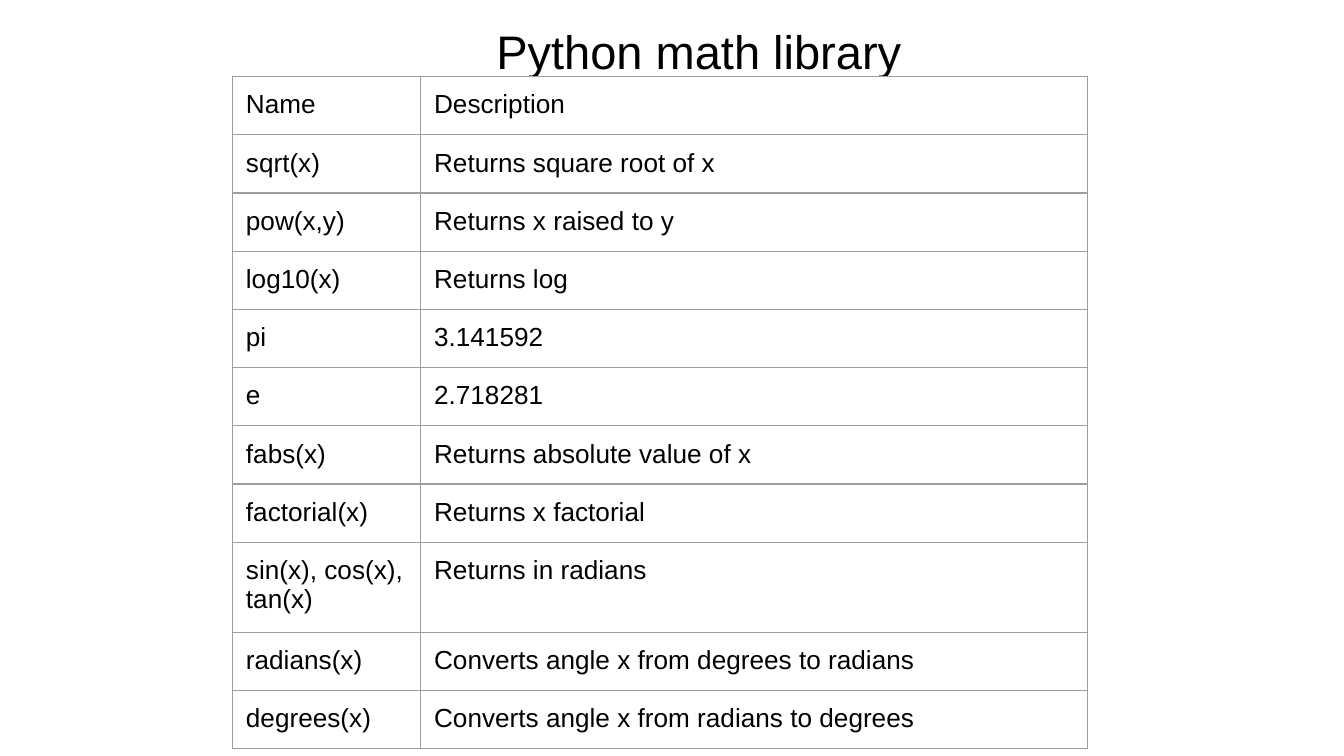
"""Build a slide with a table of Python math functions."""
from typing import NamedTuple

from lxml import etree
from pptx import Presentation
from pptx.dml.color import RGBColor
from pptx.enum.text import MSO_ANCHOR, PP_ALIGN
from pptx.oxml.ns import qn
from pptx.util import Inches, Pt

CENTER = PP_ALIGN.CENTER
TOP, BOTTOM = MSO_ANCHOR.TOP, MSO_ANCHOR.BOTTOM
BLACK, WHITE, GREY = "000000", "FFFFFF", "9E9E9E"
PAD = Inches(0.1)
SIDES = ("left", "right", "top", "bottom")
MARGINS = {f"margin_{side}": PAD for side in SIDES}
WIDTHS = (1.4, 4.96)
SHORT, TALL = 1.3 / 3, 0.67


class Entry(NamedTuple):
    name: str
    text: str
    height: float = SHORT


ENTRIES = [
    Entry("Name", "Description"),
    Entry("sqrt(x)", "Returns square root of x"),
    Entry("pow(x,y)", "Returns x raised to y"),
    Entry("log10(x)", "Returns log"),
    Entry("pi", "3.141592"),
    Entry("e", "2.718281"),
    Entry("fabs(x)", "Returns absolute value of x"),
    Entry("factorial(x)", "Returns x factorial"),
    Entry("sin(x), cos(x), tan(x)", "Returns in radians", TALL),
    Entry("radians(x)", "Converts angle x from degrees to radians"),
    Entry("degrees(x)", "Converts angle x from radians to degrees"),
]


def color(code: str) -> RGBColor:
    return RGBColor.from_string(code)


def apply(target, values: dict) -> None:
    for key, value in values.items():
        setattr(target, key, value)


def write(frame, text: str, size: float) -> None:
    frame.text = text
    font = frame.paragraphs[0].runs[0].font
    apply(font, {"name": "Arial", "size": Pt(size), "bold": False})
    font.color.rgb = color(BLACK)


def add_edges(cell) -> None:
    props = cell._tc.get_or_add_tcPr()
    for spot, side in enumerate("LRTB"):
        line = etree.Element(qn(f"a:ln{side}"), w=str(Pt(0.75)))
        fill = etree.SubElement(line, qn("a:solidFill"))
        etree.SubElement(fill, qn("a:srgbClr"), val=GREY)
        props.insert(spot, line)


def fill_cell(cell, text: str) -> None:
    write(cell.text_frame, text, 14)
    apply(cell, {**MARGINS, "vertical_anchor": TOP})
    cell.fill.solid()
    cell.fill.fore_color.rgb = color(WHITE)
    add_edges(cell)


def add_title(slide, text: str) -> None:
    title = slide.shapes.title
    apply(title, {"left": Inches(0.54), "top": Inches(0.06),
                  "width": Inches(9.32), "height": Inches(0.63)})
    frame = title.text_frame
    write(frame, text, 25.2)
    apply(frame, {**MARGINS, "word_wrap": True, "vertical_anchor": BOTTOM})
    frame.paragraphs[0].alignment = CENTER


def add_grid(slide, entries: list[Entry]) -> None:
    height = sum(entry.height for entry in entries)
    table = slide.shapes.add_table(
        len(entries), len(WIDTHS), Inches(1.73), Inches(0.57),
        Inches(sum(WIDTHS)), Inches(height)).table
    apply(table, {"first_row": False, "horz_banding": False})
    for column, width in zip(table.columns, WIDTHS):
        column.width = Inches(width)
    for row, entry in zip(table.rows, entries):
        row.height = Inches(entry.height)
        for cell, text in zip(row.cells, (entry.name, entry.text)):
            fill_cell(cell, text)


def main() -> None:
    deck = Presentation()
    apply(deck, {"slide_width": Inches(10),
                 "slide_height": Inches(10 * 9 / 16)})
    slide = deck.slides.add_slide(deck.slide_layouts[5])
    add_title(slide, "Python math library")
    add_grid(slide, ENTRIES)
    deck.save("out.pptx")


if __name__ == "__main__":
    main()
